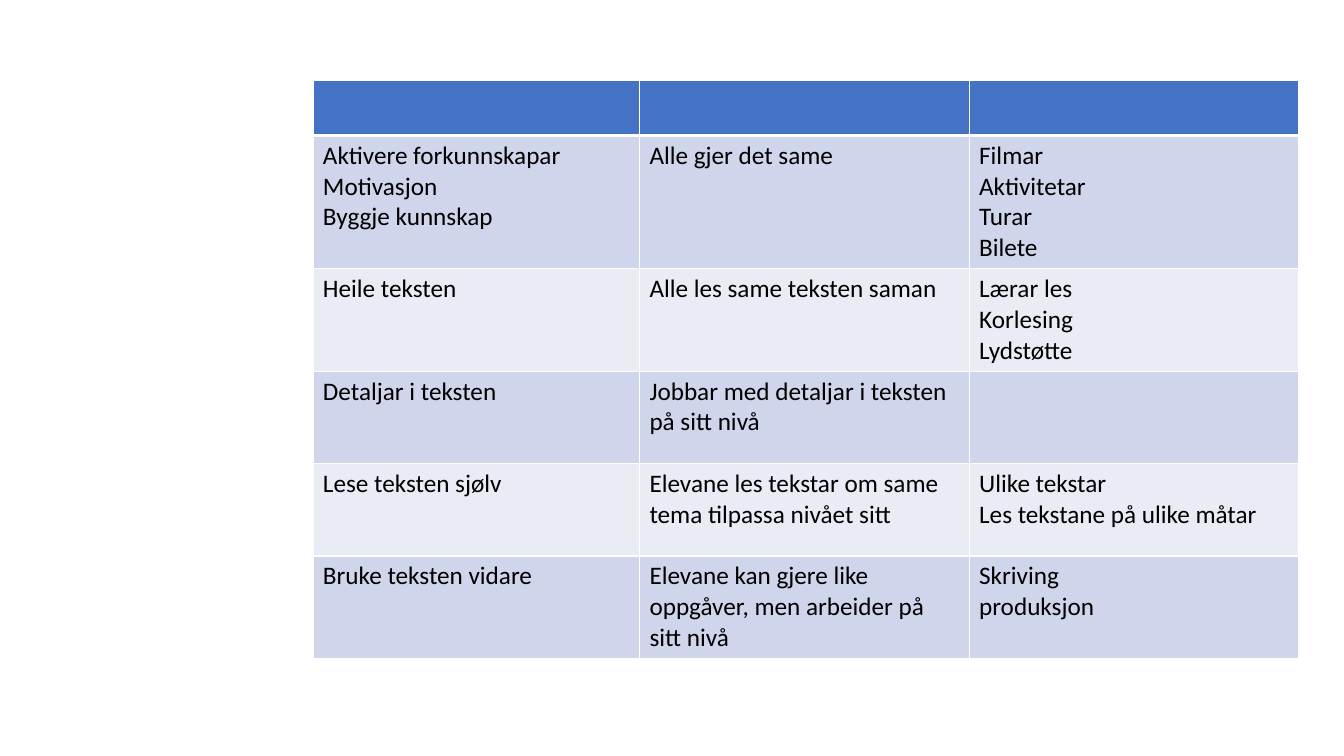
from lxml.etree import SubElement
from pptx import Presentation
from pptx.dml.color import RGBColor
from pptx.oxml.ns import qn
from pptx.util import Emu, Pt

PIXEL = 9525
FONT = "Calibri"
COLORS = {
    "header": "4472C4",
    "dark_band": "CFD5EA",
    "light_band": "E9EBF5",
    "border": "FFFFFF",
    "text": "000000",
}
COLUMN_WIDTHS = [311, 314, 314]
ROW_HEIGHTS = [52, 127, 88, 88, 88, 52]
READING_PLAN = [
    ["", "", ""],
    [
        "Aktivere forkunnskapar\nMotivasjon\nByggje kunnskap",
        "Alle gjer det same",
        "Filmar\nAktivitetar\nTurar\nBilete",
    ],
    ["Heile teksten", "Alle les same teksten saman", "Lærar les\nKorlesing\nLydstøtte"],
    ["Detaljar i teksten", "Jobbar med detaljar i teksten på sitt nivå", ""],
    [
        "Lese teksten sjølv",
        "Elevane les tekstar om same tema tilpassa nivået sitt",
        "Ulike tekstar\nLes tekstane på ulike måtar",
    ],
    [
        "Bruke teksten vidare",
        "Elevane kan gjere like oppgåver, men arbeider på sitt nivå",
        "Skriving\nproduksjon",
    ],
]


def px(length):
    return Emu(length * PIXEL)


def add_borders(cell, row_index):
    properties = cell._tc.get_or_add_tcPr()
    widths = {
        "a:lnL": 1,
        "a:lnR": 1,
        "a:lnT": 3 if row_index == 1 else 1,
        "a:lnB": 3 if row_index == 0 else 1,
    }
    for tag, width in widths.items():
        line = SubElement(properties, qn(tag), w=str(Pt(width)))
        fill = SubElement(line, qn("a:solidFill"))
        SubElement(fill, qn("a:srgbClr"), val=COLORS["border"])


def fill_cell(cell, text, row_index):
    add_borders(cell, row_index)
    band = "dark_band" if row_index % 2 else "light_band"
    color = COLORS["header" if row_index == 0 else band]
    cell.fill.solid()
    cell.fill.fore_color.rgb = RGBColor.from_string(color)
    cell.text = text
    for paragraph in cell.text_frame.paragraphs:
        paragraph.font.name = FONT
        paragraph.font.size = Pt(18)
        paragraph.font.color.rgb = RGBColor.from_string(COLORS["text"])


def add_reading_plan(page, left, top, width, height):
    frame = page.shapes.add_table(
        len(READING_PLAN), len(COLUMN_WIDTHS), px(left), px(top), px(width), px(height)
    )
    table = frame.table
    for column, column_width in zip(table.columns, COLUMN_WIDTHS):
        column.width = px(column_width)
    for row, row_height in zip(table.rows, ROW_HEIGHTS):
        row.height = px(row_height)
    frame.height = px(height)
    for row_index, texts in enumerate(READING_PLAN):
        for column_index, text in enumerate(texts):
            fill_cell(table.cell(row_index, column_index), text, row_index)


def main():
    deck = Presentation()
    deck.slide_width, deck.slide_height = px(1280), px(720)
    page = deck.slides.add_slide(deck.slide_layouts[6])
    add_reading_plan(page, 298, 77, sum(COLUMN_WIDTHS), 547)
    deck.save("out.pptx")


if __name__ == "__main__":
    main()
